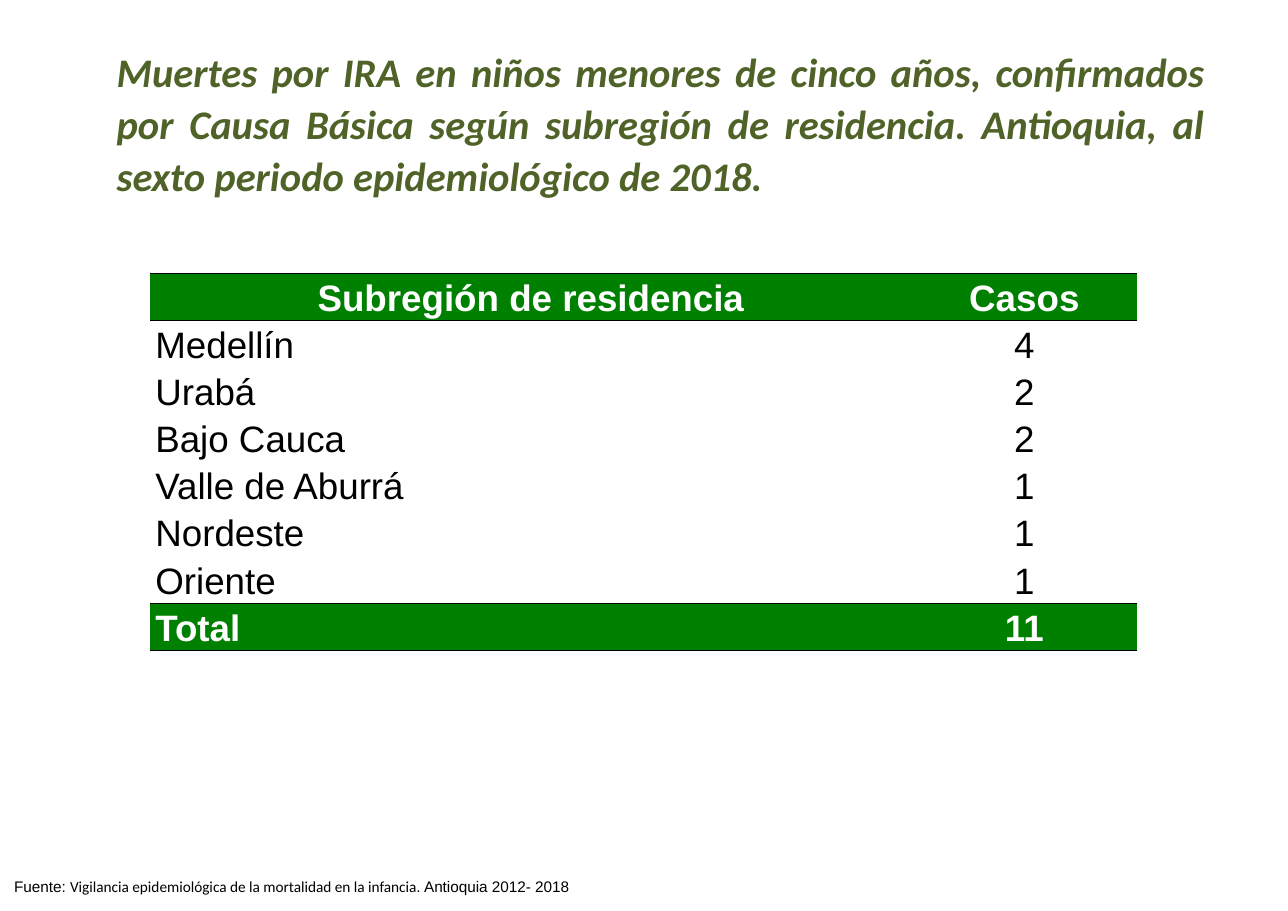
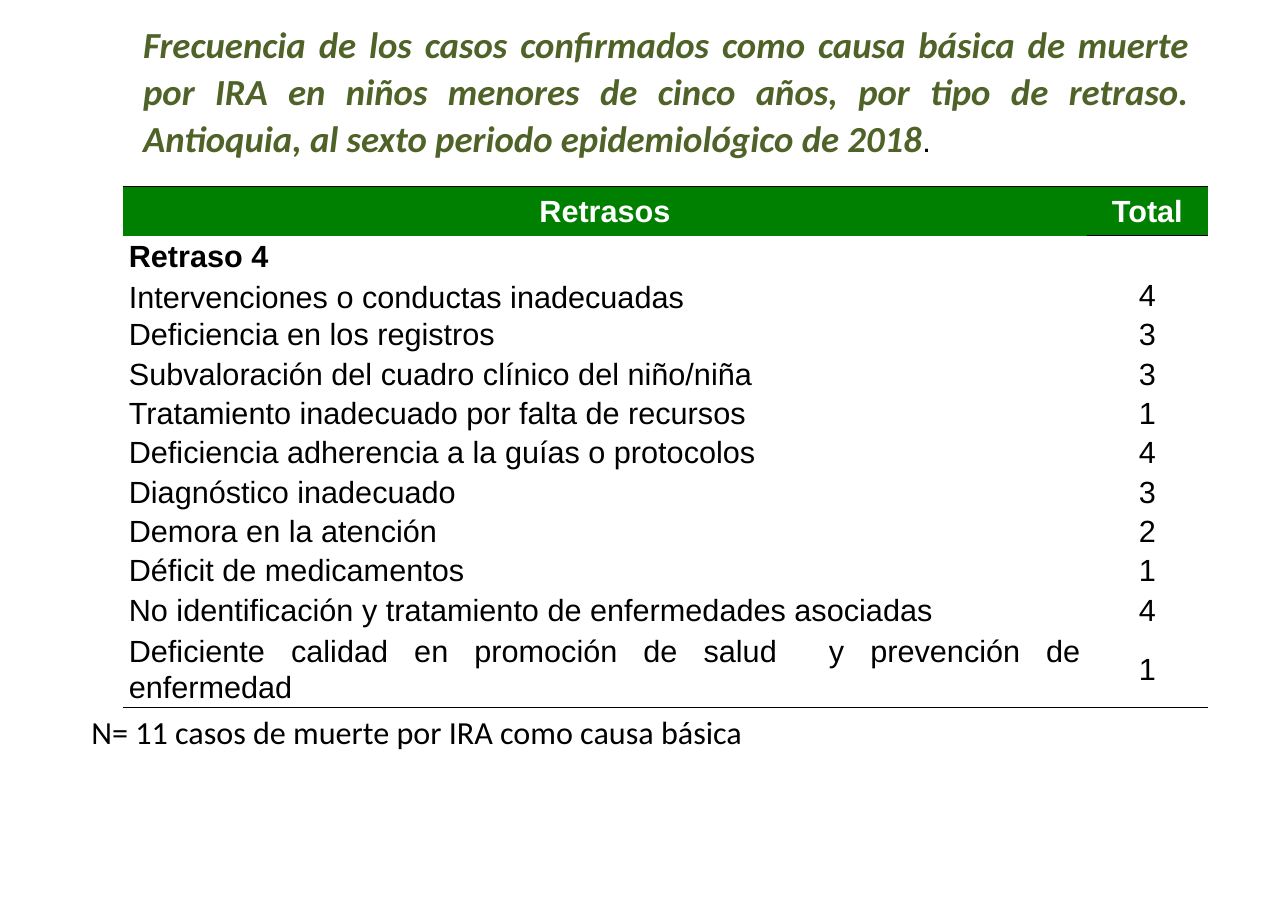
from lxml.etree import Element, SubElement
from pptx import Presentation
from pptx.dml.color import RGBColor
from pptx.enum.text import MSO_ANCHOR as Anchor, MSO_AUTO_SIZE as AutoSize, PP_ALIGN as Align
from pptx.oxml.ns import qn
from pptx.util import Pt

BLACK, WHITE, GREEN, OLIVE = "000000", "FFFFFF", "008000", "4F6228"
BODY, HEADING = "Arial", "Calibri"
LINE_SPACING = 1.07


def color(value):
    return RGBColor.from_string(value)


class Deck:
    """Holds the shared style and the current slide."""

    def __init__(self, width, height):
        self.presentation = Presentation()
        self.presentation.slide_width = Pt(width)
        self.presentation.slide_height = Pt(height)
        self.slide = None

    def new_slide(self):
        self.slide = self.presentation.slides.add_slide(self.presentation.slide_layouts[6])

    def run(self, paragraph, text, size, font=BODY, fill=BLACK, bold=False, italic=False):
        run = paragraph.add_run()
        run.text = text
        run.font.name = font
        run.font.size = Pt(size)
        run.font.bold = bold
        run.font.italic = italic
        run.font.color.rgb = color(fill)

    def text_box(self, left, top, width, height):
        frame = self.slide.shapes.add_textbox(Pt(left), Pt(top), Pt(width), Pt(height)).text_frame
        frame.word_wrap = True
        frame.auto_size = AutoSize.SHAPE_TO_FIT_TEXT
        return frame.paragraphs[0]

    def title(self, left, top, width, height, text, size):
        paragraph = self.text_box(left, top, width, height)
        paragraph.alignment = Align.JUSTIFY
        paragraph.line_spacing = LINE_SPACING
        self.run(paragraph, text, size, HEADING, OLIVE, True, True)
        return paragraph

    def borders(self, cell, ruled_edges):
        properties = cell._tc.get_or_add_tcPr()
        for position, edge in enumerate(("lnL", "lnR", "lnT", "lnB")):
            line = Element(qn(f"a:{edge}"), w=str(Pt(1)))
            if edge in ruled_edges:
                fill = SubElement(line, qn("a:solidFill"))
                SubElement(fill, qn("a:srgbClr"), val=BLACK)
            else:
                SubElement(line, qn("a:noFill"))
            properties.insert(position, line)

    def cell(self, cell, text, size, alignment, banded, bold):
        cell.margin_left = cell.margin_right = Pt(3.6)
        cell.margin_top = cell.margin_bottom = 0
        cell.vertical_anchor = Anchor.MIDDLE
        if banded:
            cell.fill.solid()
            cell.fill.fore_color.rgb = color(GREEN)
        else:
            cell.fill.background()
        paragraph = cell.text_frame.paragraphs[0]
        paragraph.alignment = alignment
        paragraph.line_spacing = LINE_SPACING
        if text:
            self.run(paragraph, text, size, fill=WHITE if banded else BLACK, bold=bold)

    def table(self, left, top, widths, heights, rows, size, banded_rows, bold_rows, rules):
        table = self.slide.shapes.add_table(
            len(rows), len(widths), Pt(left), Pt(top), Pt(sum(widths)), Pt(sum(heights))).table
        table.first_row = table.horz_banding = False
        for column, width in zip(table.columns, widths):
            column.width = Pt(width)
        for row, height in zip(table.rows, heights):
            row.height = Pt(height)
        for row_index, values in enumerate(rows):
            for column_index, text in enumerate(values):
                cell = table.cell(row_index, column_index)
                centred = row_index == 0 or column_index > 0
                long_label = len(text) > 60
                alignment = Align.CENTER if centred else Align.JUSTIFY if long_label else Align.LEFT
                self.cell(cell, text, size, alignment, row_index in banded_rows,
                          row_index in bold_rows)
                self.borders(cell, [edge for edge, boundary in
                                    (("lnT", row_index), ("lnB", row_index + 1))
                                    if column_index in rules.get(boundary, ())])
        return table


def deaths_by_subregion(deck):
    deck.new_slide()
    deck.title(69.1, 25.2, 725.8, 110.2,
               "Muertes por IRA en niños menores de cinco años, confirmados por Causa Básica "
               "según subregión de residencia. Antioquia, al sexto periodo epidemiológico de 2018.",
               26.5)
    rows = [
        ("Subregión de residencia", "Casos"),
        ("Medellín", "4"),
        ("Urabá", "2"),
        ("Bajo Cauca", "2"),
        ("Valle de Aburrá", "1"),
        ("Nordeste", "1"),
        ("Oriente", "1"),
        ("Total", "11"),
    ]
    last = len(rows) - 1
    deck.table(97.9, 178.6, (498, 147), [30.8] * len(rows), rows, 24, (0, last), (0, last),
               {boundary: (0, 1) for boundary in (0, 1, last, last + 1)})
    source = deck.text_box(2.2, 569.5, 652.3, 19.4)
    deck.run(source, "Fuente: ", 10)
    deck.run(source, "Vigilancia epidemiológica de la mortalidad en la infancia", 10, HEADING)
    deck.run(source, ". Antioquia 2012- 2018", 10)


def cases_by_delay(deck):
    deck.new_slide()
    rows = [
        ("Retrasos", "Total"),
        ("Retraso 4", ""),
        ("Intervenciones o conductas inadecuadas", "4"),
        ("Deficiencia en los registros", "3"),
        ("Subvaloración del cuadro clínico del niño/niña", "3"),
        ("Tratamiento inadecuado por falta de recursos", "1"),
        ("Deficiencia adherencia a la guías o protocolos", "4"),
        ("Diagnóstico inadecuado", "3"),
        ("Demora en la atención", "2"),
        ("Déficit de medicamentos", "1"),
        ("No identificación y tratamiento de enfermedades asociadas", "4"),
        ("Deficiente calidad en promoción de salud  y prevención de enfermedad", "1"),
    ]
    heights = [32.4] + [25.7] * (len(rows) - 2) + [51.2]
    table = deck.table(80.6, 121.7, (629.6, 79.2), heights, rows, 20, (0,), (0, 1),
                       {0: (0, 1), 1: (1,), len(rows): (0, 1)})
    table.cell(2, 0).vertical_anchor = Anchor.BOTTOM
    title = deck.title(86.4, 8.6, 697.7, 100.8,
                       "Frecuencia de los casos confirmados como causa básica de muerte por IRA en "
                       "niños menores de cinco años, por tipo de retraso. Antioquia, al sexto "
                       "periodo epidemiológico de 2018", 24)
    deck.run(title, ".", 20)
    note = deck.text_box(52.6, 462.2, 455.8, 32.4)
    deck.run(note, "N= 11 casos de muerte por IRA como causa básica", 21, HEADING)


def main():
    deck = Deck(841.68, 595.44)
    deaths_by_subregion(deck)
    cases_by_delay(deck)
    deck.presentation.save("out.pptx")


if __name__ == "__main__":
    main()
